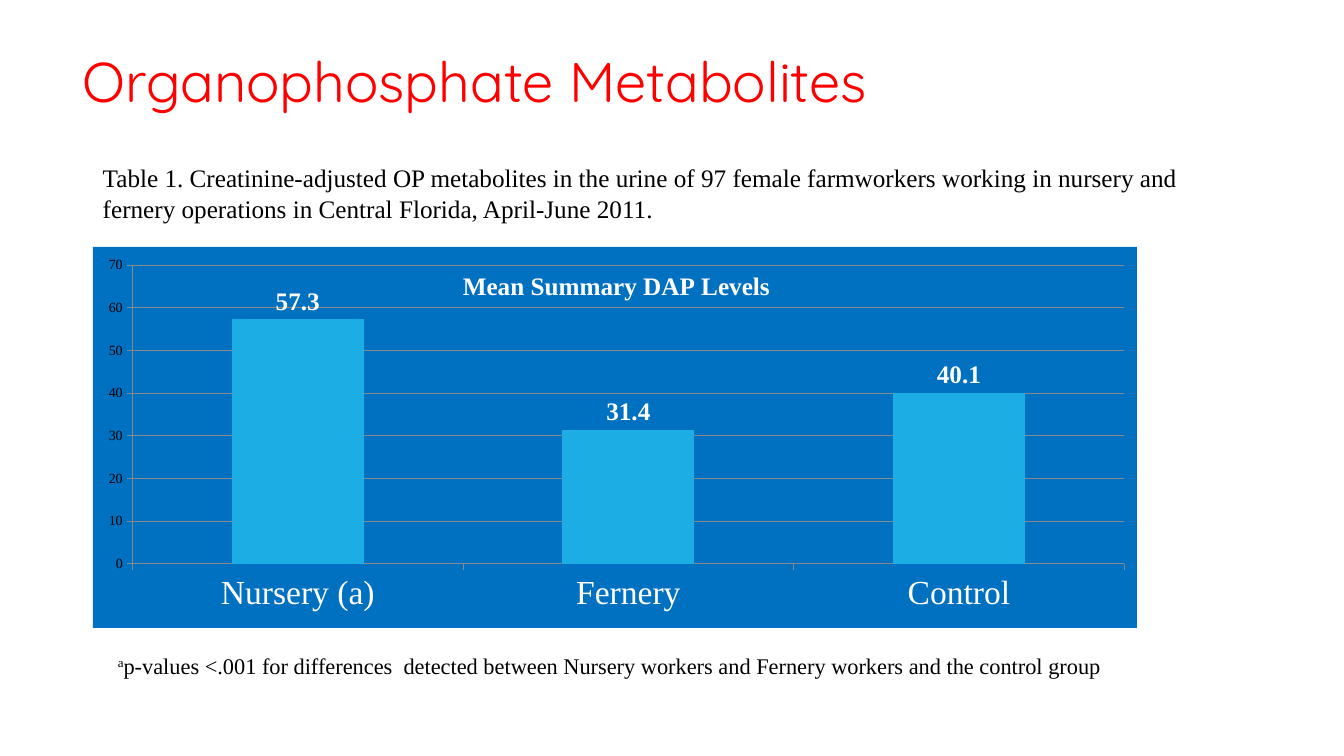
from lxml.etree import SubElement
from pptx import Presentation
from pptx.chart.data import CategoryChartData
from pptx.dml.color import RGBColor
from pptx.enum.chart import XL_CHART_TYPE as ChartType, XL_LABEL_POSITION as LabelPosition
from pptx.enum.chart import XL_TICK_MARK as TickMark
from pptx.enum.text import MSO_ANCHOR as Anchor, MSO_AUTO_SIZE as AutoSize, PP_ALIGN as Align
from pptx.oxml import parse_xml
from pptx.oxml.ns import nsdecls, qn
from pptx.util import Cm, Pt

# Content
HEADING = "Organophosphate Metabolites"
CAPTION = ("Table 1. Creatinine-adjusted OP metabolites in the urine of 97 female farmworkers "
           "working in nursery and fernery operations in Central Florida, April-June 2011.")
FOOTNOTE_MARK = "a"
FOOTNOTE = ("p-values <.001 for differences  detected between Nursery workers "
            "and Fernery workers and the control group")
CHART_TITLE = "Mean Summary DAP Levels"
DAP_LEVELS = {"Nursery (a)": 57.3, "Fernery": 31.4, "Control": 40.1}


class Theme:
    HEAD_FONT, BODY_FONT = "Quicksand", "Times New Roman"
    RED, BLACK, WHITE = (RGBColor.from_string(c) for c in ("FF0000", "000000", "FFFFFF"))
    PANEL, BAR, LINE = (RGBColor.from_string(c) for c in ("0070C0", "1CADE4", "898989"))
    HEADING, CATEGORY, BODY, NOTE, AXIS = Pt(40), Pt(24), Pt(18), Pt(16), Pt(10)


# Left, top, width, height in centimetres
HEADING_BOX = (1.83, 0.28, 29.21, 3.68)
CAPTION_BOX = (2.34, 3.96, 28.24, 1.8)
CHART_BOX = (2.34, 6.22, 26.31, 9.6)
FOOTNOTE_BOX = (2.72, 16.31, 26.29, 1.7)


def style(font, size, color, name=Theme.BODY_FONT, bold=False):
    font.size, font.name, font.bold = size, name, bold
    font.color.rgb = color


def add_text(slide, box, size, anchor, *texts):
    frame = slide.shapes.add_textbox(*map(Cm, box)).text_frame
    frame.word_wrap = True
    frame.vertical_anchor = anchor
    paragraph = frame.paragraphs[0]
    for text in texts:
        paragraph.add_run().text = text
    style(paragraph.font, size, Theme.BLACK)
    return paragraph


def place(parent, index, **settings):
    """Give a chart part a manual layout, as fractions of the chart."""
    for old in parent.findall(qn("c:layout")):
        parent.remove(old)
    layout = parse_xml(f"<c:layout {nsdecls('c')}><c:manualLayout/></c:layout>")
    for tag, value in settings.items():
        SubElement(layout[0], qn(f"c:{tag}")).set("val", str(value))
    parent.insert(index, layout)


def add_heading(slide):
    heading = slide.shapes.title
    heading.left, heading.top, heading.width, heading.height = map(Cm, HEADING_BOX)
    frame = heading.text_frame
    frame.text = HEADING
    frame.auto_size = AutoSize.NONE
    frame.vertical_anchor = Anchor.MIDDLE
    paragraph = frame.paragraphs[0]
    paragraph.alignment = Align.LEFT
    paragraph.line_spacing = 0.9
    style(paragraph.font, Theme.HEADING, Theme.RED, Theme.HEAD_FONT)


def add_dap_chart(slide):
    levels = CategoryChartData()
    levels.categories = list(DAP_LEVELS)
    levels.add_series("Series 1", list(DAP_LEVELS.values()))
    chart = slide.shapes.add_chart(ChartType.COLUMN_CLUSTERED, *map(Cm, CHART_BOX), levels).chart
    chart.has_legend = False
    style(chart.font, Theme.AXIS, Theme.BLACK)

    # Blue panel behind the whole chart
    chart_space = chart.element
    chart_space.find(qn("c:txPr")).addprevious(parse_xml(
        f"<c:spPr {nsdecls('c', 'a')}><a:solidFill><a:srgbClr val='{Theme.PANEL}'/></a:solidFill>"
        "<a:ln><a:noFill/></a:ln></c:spPr>"))

    # Title laid over the plot
    chart.has_title = True
    chart.chart_title.text_frame.text = CHART_TITLE
    style(chart.chart_title.text_frame.paragraphs[0].font, Theme.BODY, Theme.WHITE, bold=True)
    title = chart_space.find(f".//{qn('c:title')}")
    place(title, 1, xMode="edge", yMode="edge", x=0.35, y=0.05)
    title.find(qn("c:overlay")).set("val", "1")
    place(chart_space.find(f".//{qn('c:plotArea')}"), 0, layoutTarget="inner",
          xMode="edge", yMode="edge", x=0.038, y=0.048, w=0.95, h=0.784)

    # Axes
    groups, scale = chart.category_axis, chart.value_axis
    for axis in (groups, scale):
        axis.major_tick_mark = TickMark.OUTSIDE
        axis.minor_tick_mark = TickMark.NONE
        axis.format.line.color.rgb = Theme.LINE
    style(groups.tick_labels.font, Theme.CATEGORY, Theme.WHITE)
    scale.minimum_scale, scale.maximum_scale, scale.major_unit = 0, 70, 10
    scale.has_major_gridlines = True
    scale.major_gridlines.format.line.color.rgb = Theme.LINE

    # Bars and their values
    bars = chart.plots[0]
    bars.gap_width = 150
    bars.vary_by_categories = False
    series = bars.series[0]
    series.format.fill.solid()
    series.format.fill.fore_color.rgb = Theme.BAR
    labels = series.data_labels
    labels.show_value = True
    labels.position = LabelPosition.OUTSIDE_END
    style(labels.font, Theme.BODY, Theme.WHITE, bold=True)


def main():
    deck = Presentation()
    deck.slide_width, deck.slide_height = Cm(33.87), Cm(19.05)
    slide = deck.slides.add_slide(deck.slide_layouts[5])
    add_heading(slide)
    add_dap_chart(slide)
    add_text(slide, CAPTION_BOX, Theme.BODY, Anchor.MIDDLE, CAPTION)
    footnote = add_text(slide, FOOTNOTE_BOX, Theme.NOTE, Anchor.TOP, FOOTNOTE_MARK, FOOTNOTE)
    footnote.runs[0].font._element.set("baseline", "30000")
    deck.save("out.pptx")


if __name__ == "__main__":
    main()
